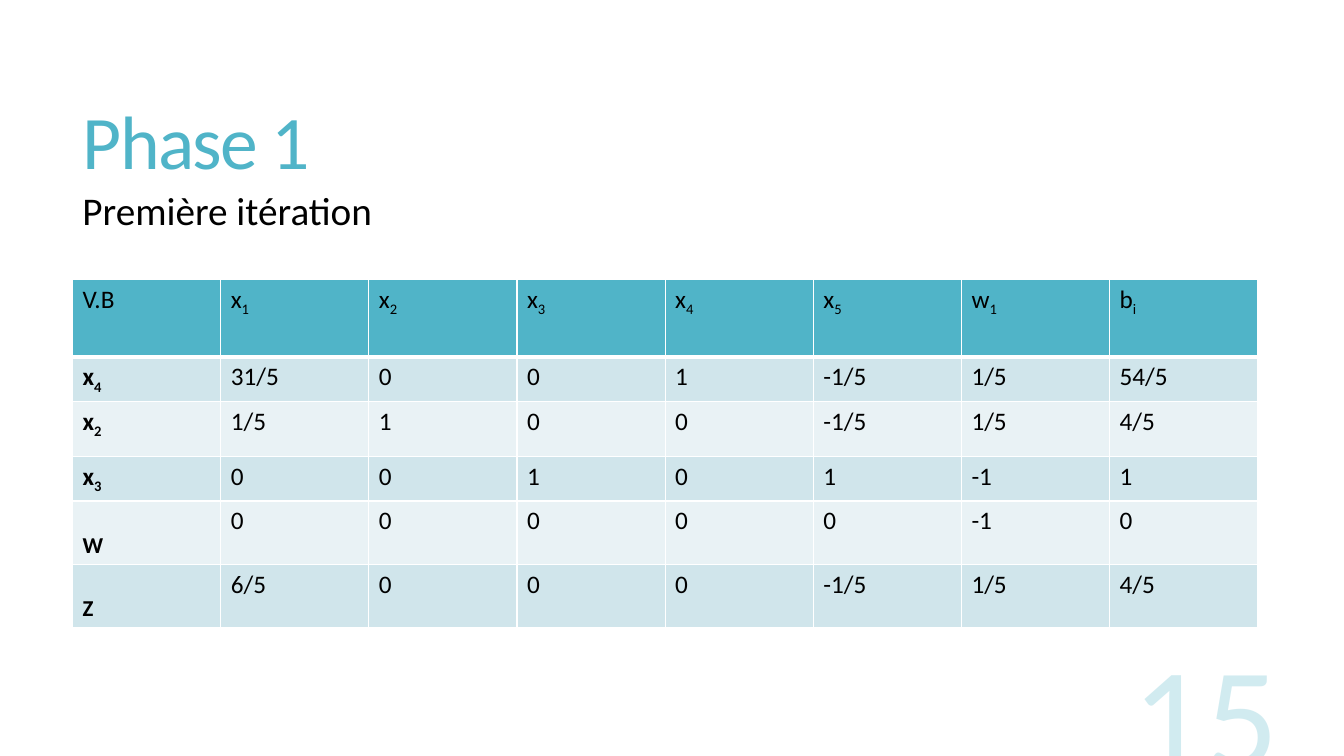
from pptx import Presentation
from pptx.dml.color import RGBColor
from pptx.enum.text import MSO_ANCHOR, PP_ALIGN
from pptx.oxml import parse_xml
from pptx.oxml.ns import nsdecls
from pptx.util import Inches, Pt

LEFT, RIGHT = PP_ALIGN.LEFT, PP_ALIGN.RIGHT
TOP, MIDDLE, BOTTOM = MSO_ANCHOR.TOP, MSO_ANCHOR.MIDDLE, MSO_ANCHOR.BOTTOM
TITLE_ONLY = 5

COLORS = {
    "accent": "50B4C8",
    "text": "000000",
    "border": "FFFFFF",
    "odd": "D0E5EB",
    "even": "E9F2F5",
}

HEADER = ["V.B", "x_1", "x_2", "x_3", "x_4", "x_5", "w_1", "b_i"]
ROWS = [
    ["x_4", "31/5", "0", "0", "1", "-1/5", "1/5", "54/5"],
    ["x_2", "1/5", "1", "0", "0", "-1/5", "1/5", "4/5"],
    ["x_3", "0", "0", "1", "0", "1", "-1", "1"],
    ["_W", "0", "0", "0", "0", "0", "-1", "0"],
    ["_Z", "6/5", "0", "0", "0", "-1/5", "1/5", "4/5"],
]
ROW_SHARES = [10.27, 5.87, 7.33, 5.87, 8.33, 8.33]


class SlideBuilder:
    font = "Calibri"
    cell_size = 18
    objective_size = 28

    def __init__(self, deck):
        self.deck = deck
        self.page = deck.slides.add_slide(deck.slide_layouts[TITLE_ONLY])

    def across(self, share):
        return round(self.deck.slide_width * share / 100)

    def down(self, share):
        return round(self.deck.slide_height * share / 100)

    def area(self, left, top, width, height):
        return self.across(left), self.down(top), self.across(width), self.down(height)

    def style(self, para, size, color, bold=False):
        para.font.name = self.font
        para.font.size = Pt(size)
        para.font.bold = bold
        para.font.color.rgb = RGBColor.from_string(COLORS[color])

    def set_text(self, box, text, size, color, anchor, align=LEFT):
        frame = box.text_frame
        frame.word_wrap = True
        frame.vertical_anchor = anchor
        para = frame.paragraphs[0]
        para.text = text
        para.alignment = align
        self.style(para, size, color)
        return para

    def title(self, text, share, size):
        box = self.page.shapes.title
        box.left, box.top, box.width, box.height = self.area(*share)
        para = self.set_text(box, text, size, "accent", MIDDLE)
        para.line_spacing = 0.85
        para.runs[0].font._element.set("spc", "-120")

    def text(self, text, share, size, color, anchor, align=LEFT):
        box = self.page.shapes.add_textbox(*self.area(*share))
        return self.set_text(box, text, size, color, anchor, align)

    def page_number(self, text, share, size):
        para = self.text(text, share, size, "accent", BOTTOM, RIGHT)
        fill = para.font._element.find(".//{*}srgbClr")
        fill.append(parse_xml(f'<a:alpha {nsdecls("a")} val="25000"/>'))

    def borders(self, cell, top, bottom):
        properties = cell._tc.get_or_add_tcPr()
        widths = {"lnL": 1, "lnR": 1, "lnT": top, "lnB": bottom}
        for position, (side, width) in enumerate(widths.items()):
            properties.insert(position, parse_xml(
                f'<a:{side} {nsdecls("a")} w="{Pt(width)}"><a:solidFill>'
                f'<a:srgbClr val="{COLORS["border"]}"/></a:solidFill></a:{side}>'))

    def cell(self, cell, text, fill, bold):
        cell.fill.solid()
        cell.fill.fore_color.rgb = RGBColor.from_string(COLORS[fill])
        cell.vertical_anchor = TOP
        base, _, lowered = text.partition("_")
        para = cell.text_frame.paragraphs[0]
        self.style(para, self.cell_size if base else self.objective_size, "text", bold)
        if base:
            para.add_run().text = base
        if lowered:
            span = para.add_run()
            span.text = lowered
            span.font._element.set("baseline", "-25000")

    def table(self, rows, left, top, width, row_shares):
        share = (left, top, width, sum(row_shares))
        table = self.page.shapes.add_table(
            len(rows), len(rows[0]), *self.area(*share)).table
        for column in table.columns:
            column.width = self.across(width / len(rows[0]))
        for index, values in enumerate(rows):
            table.rows[index].height = self.down(row_shares[index])
            fill = "accent" if index == 0 else "odd" if index % 2 else "even"
            for position, value in enumerate(values):
                cell = table.cell(index, position)
                self.cell(cell, value, fill, index > 0 and position == 0)
                self.borders(cell, 3 if index == 1 else 1, 3 if index == 0 else 1)


def main():
    deck = Presentation()
    deck.slide_width, deck.slide_height = Inches(13.33), Inches(7.5)
    slide = SlideBuilder(deck)
    slide.title("Phase 1", (5.4, 7.33, 88.37, 24.13), 54)
    slide.table([HEADER] + ROWS, 5.4, 36.93, 88.2, ROW_SHARES)
    slide.page_number("15", (71.87, 85.73, 24, 20.4), 103)
    slide.text("Première itération", (5.4, 24.67, 39.46, 6.27), 28, "text", MIDDLE)
    deck.save("out.pptx")


if __name__ == "__main__":
    main()
